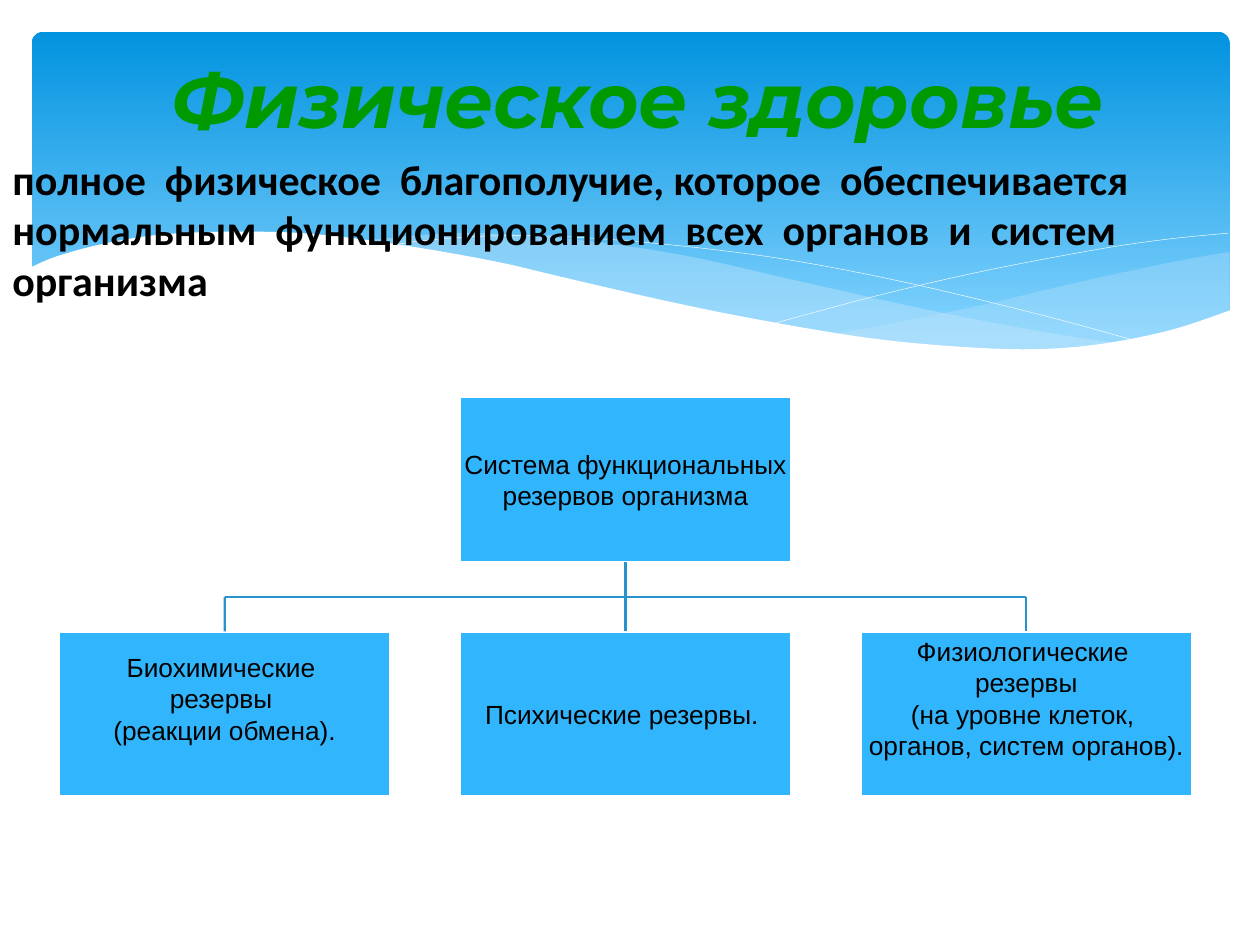
from dataclasses import dataclass

from lxml import etree
from pptx import Presentation
from pptx import util as u
from pptx.dml.color import RGBColor
from pptx.enum import shapes, text
from pptx.oxml.ns import qn


@dataclass(frozen=True)
class Theme:
    sky: str = "0293E0"
    pale_sky: str = "83D3FE"
    mist: str = "C6E7FC"
    white: str = "FFFFFF"
    box: str = "31B6FD"
    link: str = "2792CB"
    ink: str = "000000"
    green: str = "009900"
    title_size: float = 44
    lead_size: float = 24
    box_size: float = 15
    line_width: float = 1.25
    hairline: float = 0.25


THEME = Theme()

# Curve knots in cm from the top left corner of the header
CENTRE_WAVE = (
    [(22.1, 6.29), (20.68, 6.09), (18.24, 5.63), (15.4, 5), (13.52, 4.57),
     (11.84, 4.29), (10.09, 4.11), (8.59, 4.06), (6.68, 4.21)],
    [(6.68, 4.21), (8.61, 4.52), (10.82, 5), (13.8, 5.66), (15.93, 6.07),
     (17.76, 6.32), (19.36, 6.42), (20.71, 6.42), (22.1, 6.29)],
)
RIGHT_WAVE = (
    [(24.21, 4.44), (23.17, 4.62), (21.29, 5.02), (19.21, 5.51),
     (17.35, 5.89), (16.21, 6.09)],
    [(16.21, 6.09), (17.68, 6.27), (18.95, 6.4), (20.1, 6.42),
     (21.34, 6.35), (22.61, 6.14), (23.52, 5.89), (24.21, 5.63)],
)
FALLING_LINE = [(7.27, 4.31), (8.16, 4.19), (9.61, 4.11), (11.33, 4.16),
                (13.54, 4.36), (15.57, 4.64), (17.89, 5.1), (20.53, 5.74),
                (22.46, 6.27)]
RISING_LINE = [(14.99, 5.89), (17.07, 5.33), (19.13, 4.85), (21.42, 4.41),
               (22.89, 4.19), (24.19, 4.06)]
WHITE_EDGE = [(0, 4.77), (0.59, 4.52), (1.58, 4.26), (2.77, 4.08),
              (4.32, 4.03), (5.77, 4.08), (7.45, 4.29), (9.35, 4.62),
              (10.77, 4.95), (12.86, 5.43), (14.74, 5.81), (16.9, 6.17),
              (18.75, 6.35), (20.32, 6.4), (21.65, 6.29), (23.04, 6.01),
              (24.24, 5.61)]


def rgb(color):
    return RGBColor.from_string(color)


def smooth(knots, steps=5):
    """Return points of a Catmull-Rom curve through the knots."""
    ends = [knots[0], *knots, knots[-1]]
    points = [knots[0]]
    for a, b, c, d in zip(ends, ends[1:], ends[2:], ends[3:]):
        for i in range(1, steps + 1):
            t = i / steps
            points.append(tuple(
                (2 * q + (r - p) * t + (2 * p - 5 * q + 4 * r - s) * t ** 2
                 + (3 * q - p - 3 * r + s) * t ** 3) / 2
                for p, q, r, s in zip(a, b, c, d)))
    return points


def add_outline(slide, box, points, fill=None, opacity=100):
    """Draw a filled area, or a white hairline when there is no fill."""
    left, top = box[:2]
    pts = [(u.Cm(left + x), u.Cm(top + y)) for x, y in points]
    builder = slide.shapes.build_freeform(*pts[0], scale=1.0)
    builder.add_line_segments(pts[1:], close=fill is not None)
    sp = builder.convert_to_shape()
    sp.shadow.inherit = False
    if fill is None:
        sp.fill.background()
        sp.line.color.rgb = rgb(THEME.white)
        sp.line.width = u.Pt(THEME.hairline)
        return
    sp.fill.solid()
    sp.fill.fore_color.rgb = rgb(fill)
    sp.line.fill.background()
    if opacity < 100:
        color = sp.fill._xPr.find(".//" + qn("a:srgbClr"))
        etree.SubElement(color, qn("a:alpha"), val=str(opacity * 1000))


def add_header(slide, box):
    left, top, width, height = box
    sp = slide.shapes.add_shape(
        shapes.MSO_SHAPE.ROUNDED_RECTANGLE, u.Cm(left + 0.06), u.Cm(top),
        u.Cm(width - 0.09), u.Cm(6.86))
    sp.adjustments[0] = 0.034
    sp.shadow.inherit = False
    sp.line.fill.background()
    sp.fill.gradient()
    sp.fill.gradient_angle = 270
    stops = ((0, THEME.sky), (0.9, THEME.pale_sky))
    for stop, (position, color) in zip(sp.fill.gradient_stops, stops):
        stop.position = position
        stop.color.rgb = rgb(color)
    for (upper, lower), opacity in ((RIGHT_WAVE, 29), (CENTRE_WAVE, 40)):
        add_outline(slide, box, smooth(upper) + smooth(lower)[1:],
                    THEME.mist, opacity)
    for knots in (FALLING_LINE, RISING_LINE):
        add_outline(slide, box, smooth(knots))
    add_outline(slide, box,
                smooth(WHITE_EDGE) + [(width, height), (0, height)],
                THEME.white)


def write(tf, lines, size, font, color, bold=None, italic=None, align=None):
    tf.word_wrap = True
    for i, line in enumerate(lines):
        p = tf.add_paragraph() if i else tf.paragraphs[0]
        p.alignment = align
        r = p.add_run()
        r.text = line
        r.font.size, r.font.name = u.Pt(size), font
        r.font.bold, r.font.italic = bold, italic
        r.font.color.rgb = rgb(color)


def add_lead(slide, box, line):
    tf = slide.shapes.add_textbox(*map(u.Cm, box)).text_frame
    write(tf, [line], THEME.lead_size, "Calibri", THEME.ink, bold=True)


def place_title(slide, box, line):
    """Move the title above the header art and fill it."""
    title = slide.shapes.title
    slide.shapes._spTree.append(title._element)
    title.left, title.top, title.width, title.height = map(u.Cm, box)
    tf = title.text_frame
    tf.auto_size = text.MSO_AUTO_SIZE.NONE
    tf.vertical_anchor = text.MSO_ANCHOR.MIDDLE
    write(tf, [line], THEME.title_size, "Montserrat", THEME.green,
          bold=True, italic=True, align=text.PP_ALIGN.CENTER)


def add_node(slide, box, lines, bottom_inset=0.03):
    sp = slide.shapes.add_shape(shapes.MSO_SHAPE.RECTANGLE, *map(u.Cm, box))
    sp.shadow.inherit = False
    sp.fill.solid()
    sp.fill.fore_color.rgb = rgb(THEME.box)
    sp.line.color.rgb = rgb(THEME.white)
    sp.line.width = u.Pt(THEME.line_width)
    tf = sp.text_frame
    tf.margin_left = tf.margin_right = tf.margin_top = u.Cm(0.03)
    tf.margin_bottom = u.Cm(bottom_inset)
    tf.vertical_anchor = text.MSO_ANCHOR.MIDDLE
    write(tf, lines, THEME.box_size, "Arial", THEME.ink,
          align=text.PP_ALIGN.CENTER)
    return sp


def add_link(slide, x1, y1, x2, y2, start=None, end=None):
    """Draw a line, joined to the bottom of start and the top of end."""
    line = slide.shapes.add_connector(
        shapes.MSO_CONNECTOR.STRAIGHT, *map(u.Cm, (x1, y1, x2, y2)))
    line.line.color.rgb = rgb(THEME.link)
    line.line.width = u.Pt(THEME.line_width)
    etree.SubElement(line._element.spPr, qn("a:effectLst"))
    if start is not None:
        line.begin_connect(start, 2)
    if end is not None:
        line.end_connect(end, 0)


def add_org_chart(slide, box, root_lines, branches):
    left, top, width, height = box
    node_w, node_h = 6.68, 3.33
    pitch = (width - node_w) / (len(branches) - 1)
    child_top = top + height - node_h
    bus_y = (top + node_h + child_top) / 2
    middle = left + width / 2
    root = add_node(slide, (middle - node_w / 2, top, node_w, node_h),
                    root_lines)
    add_link(slide, left + node_w / 2, bus_y,
             left + width - node_w / 2, bus_y)
    for i, (lines, inset) in enumerate(branches):
        x = left + i * pitch
        child = add_node(slide, (x, child_top, node_w, node_h), lines, inset)
        centre = x + node_w / 2
        is_middle = i == len(branches) // 2
        add_link(slide, centre, top + node_h if is_middle else bus_y,
                 centre, child_top, root if is_middle else None, child)


def main():
    prs = Presentation()
    prs.slide_width, prs.slide_height = u.Cm(25.4), u.Cm(19.05)
    slide = prs.slides.add_slide(prs.slide_layouts[5])
    add_header(slide, (0.58, 0.64, 24.24, 7.72))
    add_lead(slide, (0, 2.97, 25.4, 3.33),
             "полное  физическое  благополучие, которое  обеспечивается "
             "нормальным  функционированием  всех  органов  и  систем "
             "организма")
    add_org_chart(
        slide, (1.19, 8, 22.84, 8.06),
        ["Система функциональных ", "резервов организма"],
        [(["Биохимические ", "резервы ", "(реакции обмена)."], 0.67),
         (["Психические резервы. "], 0.03),
         (["Физиологические ", "резервы", "(на уровне клеток, ",
           "органов, систем органов)."], 0.67)])
    place_title(slide, (0.79, 0.79, 24.13, 2.34), "Физическое здоровье")
    prs.save("out.pptx")


if __name__ == "__main__":
    main()
